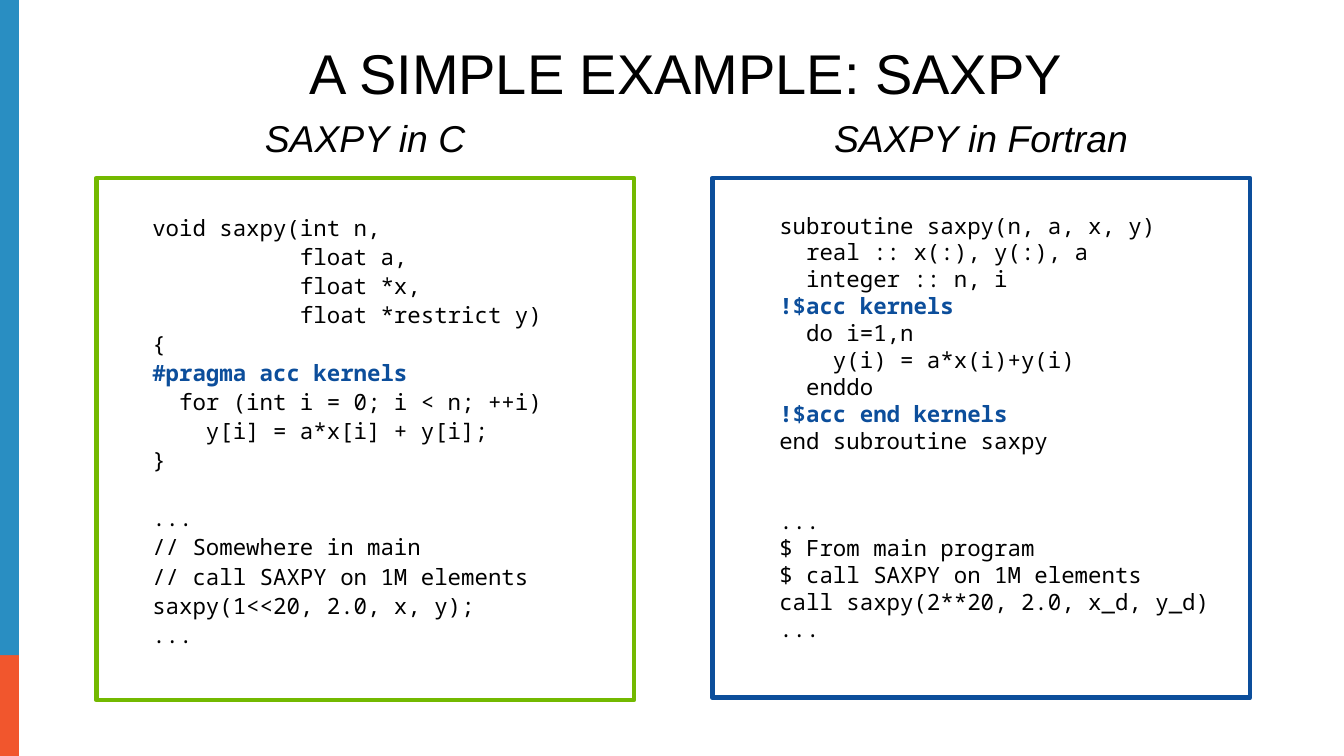
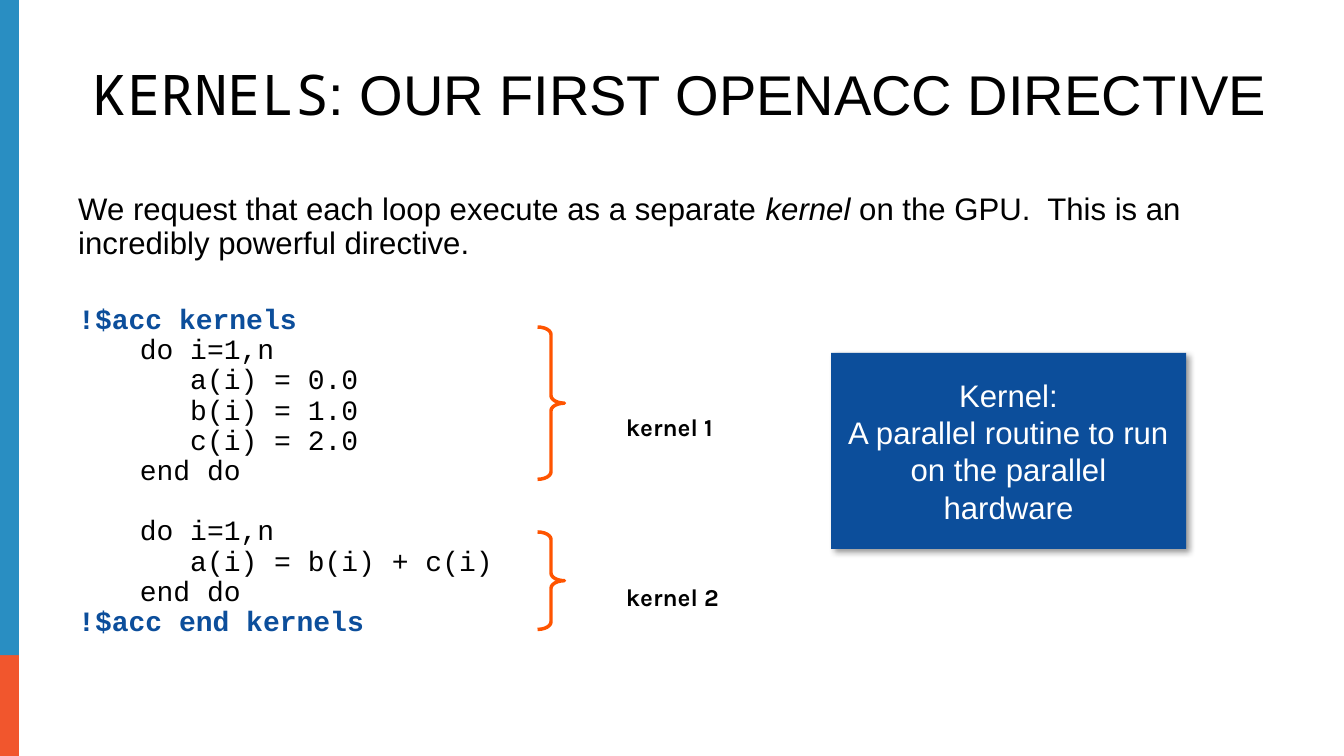
from lxml import etree
from pptx import Presentation
from pptx import util as u
from pptx.dml.color import RGBColor
from pptx.enum import shapes, text
from pptx.oxml.ns import qn

# ---- Content ----
PANELS = [
    dict(heading="SAXPY in C", heading_width=2.91, height=4.66, border="green",
         inset=(0, 0.32), spacing=1.4, gap=20.1,
         code=[["void saxpy(int n,",
                "           float a,",
                "           float *x,",
                "           float *restrict y)",
                "{",
                "#pragma acc kernels",
                "  for (int i = 0; i < n; ++i)",
                "    y[i] = a*x[i] + y[i];",
                "}"],
               ["...",
                "// Somewhere in main",
                "// call SAXPY on 1M elements",
                "saxpy(1<<20, 2.0, x, y);",
                "..."]]),
    dict(heading="SAXPY in Fortran", heading_width=3.63, height=4.64, border="blue",
         inset=(0.1, 0.3), spacing=0, gap=34.6,
         code=[["subroutine saxpy(n, a, x, y)",
                "  real :: x(:), y(:), a",
                "  integer :: n, i",
                "!$acc kernels",
                "  do i=1,n",
                "    y(i) = a*x(i)+y(i)",
                "  enddo",
                "!$acc end kernels",
                "end subroutine saxpy"],
               ["...",
                "$ From main program",
                "$ call SAXPY on 1M elements",
                "call saxpy(2**20, 2.0, x_d, y_d)",
                "..."]]),
]
REQUEST = [("We request that each loop execute as a separate ", {}),
           ("kernel ", dict(italic=True)),
           ("on the GPU.  This is an incredibly powerful directive.", {})]
LOOPS = [["!$acc kernels",
          "  do i=1,n",
          "     a(i) = 0.0",
          "     b(i) = 1.0",
          "     c(i) = 2.0",
          "  end do"],
         ["  do i=1,n",
          "     a(i) = b(i) + c(i)",
          "  end do",
          "!$acc end kernels"]]
# label, brace top, brace height, label top
KERNELS = [("kernel 1", 2.92, 1.36, 3.63), ("kernel 2", 4.75, 0.87, 5.15)]
DEFINITION = ["Kernel:", "A parallel routine to run on the parallel hardware"]

# ---- Shared style ----
COLORS = dict(black="000000", white="FFFFFF", blue="0C4E9B", green="73B900",
              orange="FF5400", band_blue="298EC2", band_red="F1562D")
SANS, MONO, COURIER, LABEL = "Arial", "Noto Sans Mono", "Courier New", "Karla"
WIDTH, HEIGHT = 12, 6.75
BANDS = [("band_red", 5.07, HEIGHT - 5.07), ("band_blue", 0, 5.85)]
PANEL_LEFT, PANEL_TOP, PANEL_WIDTH, PANEL_PITCH = 0.86, 1.59, 4.8, 5.5


def rgb(name):
    return RGBColor.from_string(COLORS[name])


def inches(*lengths):
    return [u.Inches(length) for length in lengths]


def write(box, lines, size=20, font=SANS, color="black", bold=False, italic=False,
          align="LEFT", anchor="TOP", inset=(0.1, 0.05), line_spacing=None):
    """Fill a box; a line is a string, a list of spans, or a dict with paragraph options."""
    frame = box.text_frame
    frame.word_wrap = True
    frame.auto_size = text.MSO_AUTO_SIZE.NONE
    frame.vertical_anchor = getattr(text.MSO_ANCHOR, anchor)
    frame.margin_left = frame.margin_right = u.Inches(inset[0])
    frame.margin_top, frame.margin_bottom = inches(inset[1], 0.05)
    for index, line in enumerate(lines):
        options = line if isinstance(line, dict) else dict(spans=line)
        spans = options["spans"]
        para = frame.add_paragraph() if index else frame.paragraphs[0]
        para.alignment = getattr(text.PP_ALIGN, align)
        if line_spacing:
            para.line_spacing = line_spacing
        if index:
            para.space_before = u.Pt(options.get("before", 0))
        if options.get("indent"):
            para._p.get_or_add_pPr().set("marL", str(u.Inches(options["indent"])))
        for words, changes in [(spans, {})] if isinstance(spans, str) else spans:
            look = dict(size=size, font=font, color=color, bold=bold, italic=italic) | changes
            span = para.add_run()
            span.text = words
            span.font.size, span.font.name = u.Pt(look["size"]), look["font"]
            span.font.bold, span.font.italic = look["bold"], look["italic"]
            span.font.color.rgb = rgb(look["color"])


def code_lines(blocks, indent, directive_indent, spacing=0, gap=0, **look):
    """Turn blocks of code into lines, with directives in bold blue."""
    lines = []
    for block in blocks:
        for row, code in enumerate(block):
            directive = code.startswith(("#pragma", "!$acc"))
            accent = dict(color="blue", bold=True) if directive else {}
            lines.append(dict(spans=[(code, look | accent)],
                              indent=directive_indent if directive else indent,
                              before=spacing if row else gap))
    return lines


def add_shape(page, kind, at, fill=None, line=None, weight=1, adjust=()):
    shape = page.shapes.add_shape(getattr(shapes.MSO_SHAPE, kind), *inches(*at))
    shape.shadow.inherit = False
    for index, value in enumerate(adjust):
        shape.adjustments[index] = value
    if fill:
        shape.fill.solid()
        shape.fill.fore_color.rgb = rgb(fill)
    else:
        shape.fill.background()
    if line:
        shape.line.color.rgb = rgb(line)
        shape.line.width = u.Pt(weight)
    else:
        shape.line.fill.background()
    return shape


def add_text(page, at, lines, **look):
    box = page.shapes.add_textbox(*inches(*at))
    write(box, lines, **look)


def add_shadow(shape):
    effects = shape._element.spPr.find(qn("a:effectLst"))
    shadow = etree.SubElement(effects, qn("a:outerShdw"), blurRad=str(u.Pt(4)),
                              dist=str(u.Pt(3)), dir=str(45 * 60000), rotWithShape="0")
    tint = etree.SubElement(shadow, qn("a:srgbClr"), val=COLORS["black"])
    etree.SubElement(tint, qn("a:alpha"), val="40000")


def add_page(deck, at, title):
    page = deck.slides.add_slide(deck.slide_layouts[5])
    box = page.shapes.title
    box.left, box.top, box.width, box.height = inches(*at)
    write(box, [title], size=36, align="CENTER", anchor="BOTTOM", line_spacing=0.9)
    return page


def add_bands(page):
    """Move the side bands to the layout, behind its placeholders."""
    tree = page.slide_layout.shapes.element
    for index, (color, top, height) in enumerate(BANDS):
        band = add_shape(page, "RECTANGLE", (-0.03, top, 0.2, height), fill=color)
        tree.insert(2 + index, band._element)


def saxpy_page(deck):
    page = add_page(deck, (1.09, 0.29, 10.07, 0.71), "A SIMPLE EXAMPLE: SAXPY")
    add_bands(page)
    for column, panel in enumerate(PANELS):
        left = PANEL_LEFT + column * PANEL_PITCH
        frame = add_shape(page, "ROUNDED_RECTANGLE",
                          (left, PANEL_TOP, PANEL_WIDTH, panel["height"]),
                          line=panel["border"], weight=3, adjust=[0])
        lines = code_lines(panel["code"], 0.5, 0.5, panel["spacing"], panel["gap"])
        write(frame, lines, size=14.4, font=MONO, inset=panel["inset"])
        width = panel["heading_width"]
        add_text(page, (left + (PANEL_WIDTH - width) / 2, 0.98, width, 0.5),
                 [panel["heading"]], size=24, italic=True, align="CENTER")


def kernels_page(deck):
    page = add_page(deck, (0.6, 0.48, 10.95, 0.71),
                    [("KERNELS", dict(font=MONO)), (": OUR FIRST OPENACC DIRECTIVE", {})])
    # Request and code
    loops = code_lines(LOOPS, 0.25, 0, gap=19.4, size=18, font=COURIER)
    loops[0]["before"] = 28.4
    add_text(page, (0.6, 1.68, 10.98, 4.69), [REQUEST] + loops, line_spacing=0.9)
    # Braces with labels
    for label, top, height, label_top in KERNELS:
        add_shape(page, "RIGHT_BRACE", (4.8, top, 0.24, height),
                  line="orange", weight=2.25, adjust=[0.28, 0.5])
        add_text(page, (5.49, label_top, 1.34, 0.36), [label],
                 size=15.6, font=LABEL, bold=True)
    # Definition
    card = add_shape(page, "ROUNDED_RECTANGLE", (7.42, 3.15, 3.17, 1.75),
                     fill="blue", adjust=[0])
    add_shadow(card)
    write(card, DEFINITION, color="white", align="CENTER", anchor="MIDDLE")


def main():
    deck = Presentation()
    deck.slide_width, deck.slide_height = inches(WIDTH, HEIGHT)
    saxpy_page(deck)
    kernels_page(deck)
    deck.save("out.pptx")


if __name__ == "__main__":
    main()
